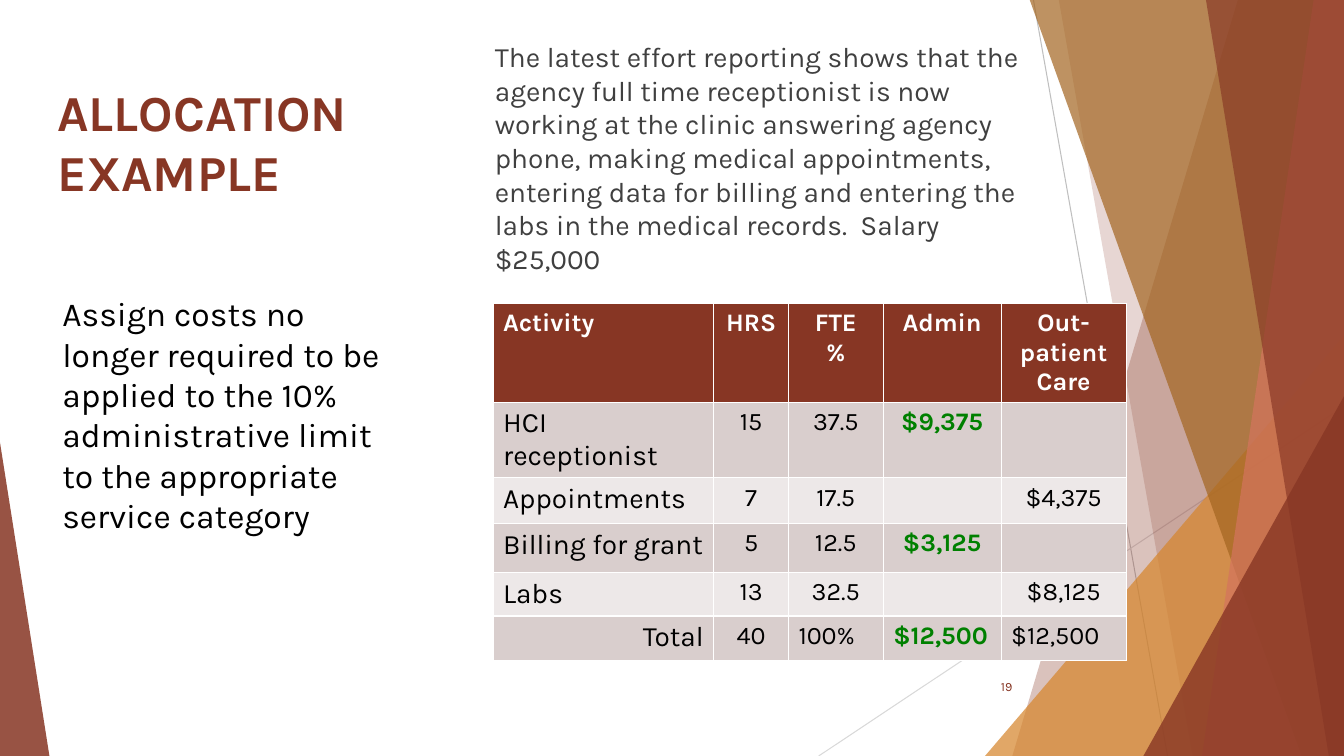
from lxml.etree import SubElement
from pptx import Presentation
from pptx.dml.color import RGBColor
from pptx.enum.shapes import MSO_CONNECTOR, MSO_SHAPE
from pptx.enum.text import MSO_ANCHOR, MSO_AUTO_SIZE, PP_ALIGN
from pptx.oxml.ns import qn
from pptx.util import Inches, Pt

COLORS = {
    "rust": "873624", "ochre": "A36520", "orange": "D6862D", "coral": "D4745E",
    "gray": "BFBFBF", "pale_gray": "D9D9D9", "body": "404040", "black": "000000",
    "white": "FFFFFF", "green": "008000", "band_dark": "D9CECD", "band_light": "EDE8E8",
}
LEFT, CENTER, RIGHT = PP_ALIGN.LEFT, PP_ALIGN.CENTER, PP_ALIGN.RIGHT
WIDTH, HEIGHT = 13.33, 7.5

RAYS = [
    ((10.25, 0), (11.58, HEIGHT), "gray"),
    ((WIDTH, 4.03), (8.12, HEIGHT), "pale_gray"),
]
BACK_BANDS = [(12.28, 10.04, "rust", 30), (10.5, 11.83, "rust", 20)]
FRONT_BANDS = [
    (10.21, 12.91, "ochre", 70),
    (13.03, 11.92, "coral", 70),
    (11.96, 13.18, "rust", 65),
]
COLUMN_WIDTHS = [2.19, 0.74, 0.94, 1.17, 1.24]
ROW_HEIGHTS = [0.97, 0.74, 0.45, 0.49, 0.43, 0.44]
ALLOCATION = [
    ["Activity", "HRS", "FTE\n%", "Admin", "Out-patient Care"],
    ["HCI receptionist", "15", "37.5", "$9,375", ""],
    ["Appointments", "7", "17.5", "", "$4,375"],
    ["Billing for grant", "5", "12.5", "$3,125", ""],
    ["Labs", "13", "32.5", "", "$8,125"],
    ["Total", "40", "100%", "$12,500", "$12,500"],
]
TOTAL_ALIGNMENTS = [RIGHT, CENTER, LEFT, LEFT, LEFT]


def rgb(name):
    return RGBColor.from_string(COLORS[name])


def format_text(frame, text, size, color, bold=False, alignment=LEFT, space_before=0):
    frame.text = text
    font_values = {"name": "Karla", "size": Pt(size), "bold": bold}
    for paragraph in frame.paragraphs:
        paragraph.alignment = alignment
        paragraph.space_before = Pt(space_before)
        for run in paragraph.runs:
            for name, value in font_values.items():
                setattr(run.font, name, value)
            run.font.color.rgb = rgb(color)


def place_text(shape, box, text, size, color, anchor=MSO_ANCHOR.TOP, **text_format):
    for name, value in zip(("left", "top", "width", "height"), box):
        setattr(shape, name, Inches(value))
    frame_values = {"word_wrap": True, "auto_size": MSO_AUTO_SIZE.NONE, "vertical_anchor": anchor}
    for name, value in frame_values.items():
        setattr(shape.text_frame, name, value)
    format_text(shape.text_frame, text, size, color, **text_format)


def add_text(slide, box, *content, **text_format):
    shape = slide.shapes.add_textbox(*map(Inches, box))
    place_text(shape, box, *content, **text_format)


def add_ray(slide, start, end, color):
    points = map(Inches, (*start, *end))
    connector = slide.shapes.add_connector(MSO_CONNECTOR.STRAIGHT, *points)
    connector.line.color.rgb = rgb(color)
    connector.line.width = Pt(0.75)
    SubElement(connector._element.spPr, qn("a:effectLst"))


def paint(shape, color, opacity):
    shape.shadow.inherit = False
    shape.line.fill.background()
    shape.fill.solid()
    shape.fill.fore_color.rgb = rgb(color)
    color_element = shape._element.spPr.find(qn("a:solidFill"))[0]
    SubElement(color_element, qn("a:alpha"), val=str(opacity * 1000))


def add_band(slide, top_x, bottom_x, color, opacity):
    """Draw a band that reaches from a slanted left edge to the slide's right side."""
    corners = [(WIDTH, -0.01), (WIDTH, HEIGHT), (bottom_x, HEIGHT)]
    builder = slide.shapes.build_freeform(Inches(top_x), Inches(-0.01))
    builder.add_line_segments([(Inches(x), Inches(y)) for x, y in corners], close=True)
    paint(builder.convert_to_shape(), color, opacity)


def add_triangle(slide, box, apex, color, opacity):
    shape = slide.shapes.add_shape(MSO_SHAPE.ISOSCELES_TRIANGLE, *map(Inches, box))
    shape.adjustments[0] = apex
    paint(shape, color, opacity)


def add_backdrop(slide):
    for ray in RAYS:
        add_ray(slide, *ray)
    for band in BACK_BANDS:
        add_band(slide, *band)
    add_triangle(slide, (9.77, 3.33, 3.56, 4.17), 1, "orange", 72)
    for band in FRONT_BANDS:
        add_band(slide, *band)
    add_triangle(slide, (11.34, 3.93, 1.99, 3.57), 1, "rust", 80)
    add_triangle(slide, (0, 4.39, 0.49, 3.11), 0, "rust", 85)


def cell_format(row, column):
    alignment = CENTER if column else LEFT
    if row == 0:
        return "rust", {"size": 18, "color": "white", "bold": True, "alignment": alignment}
    if row == len(ALLOCATION) - 1:
        alignment = TOTAL_ALIGNMENTS[column]
    is_admin = column == 3
    return "band_dark" if row % 2 else "band_light", {
        "size": 18 if column else 20,
        "color": "green" if is_admin else "black",
        "bold": is_admin,
        "alignment": alignment,
    }


def add_allocation_table(slide):
    box = (4.89, 3.01, sum(COLUMN_WIDTHS), sum(ROW_HEIGHTS))
    frame = slide.shapes.add_table(len(ROW_HEIGHTS), len(COLUMN_WIDTHS), *map(Inches, box))
    table = frame.table
    for column, width in zip(table.columns, COLUMN_WIDTHS):
        column.width = Inches(width)
    for row, height in zip(table.rows, ROW_HEIGHTS):
        row.height = Inches(height)
    for row_index, texts in enumerate(ALLOCATION):
        for column_index, text in enumerate(texts):
            cell = table.cell(row_index, column_index)
            fill, text_format = cell_format(row_index, column_index)
            cell.fill.solid()
            cell.fill.fore_color.rgb = rgb(fill)
            format_text(cell.text_frame, text, **text_format)


def main():
    presentation = Presentation()
    presentation.slide_width = Inches(WIDTH)
    presentation.slide_height = Inches(HEIGHT)
    slide = presentation.slides.add_slide(presentation.slide_layouts[5])
    add_backdrop(slide)
    place_text(slide.shapes.title, (0.47, 0.65, 4.22, 1.4), "ALLOCATION \vEXAMPLE",
               36, "rust", anchor=MSO_ANCHOR.BOTTOM, bold=True)
    add_text(slide, (4.81, 0.29, 5.63, 2.54),
             "The latest effort reporting shows that the agency full time receptionist is now "
             "working at the clinic answering agency phone, making medical appointments, "
             "entering data for billing and entering the labs in the medical records.  "
             "Salary $25,000",
             20, "body", anchor=MSO_ANCHOR.MIDDLE, space_before=10)
    add_text(slide, (0.52, 2.86, 3.56, 3.23),
             "Assign costs no longer required to be applied to the 10% administrative limit "
             "to the appropriate service category",
             24, "black", space_before=10)
    add_allocation_table(slide)
    add_text(slide, (9.39, 6.61, 0.75, 0.4), "19", 9, "rust",
             anchor=MSO_ANCHOR.MIDDLE, alignment=RIGHT)
    presentation.save("out.pptx")


if __name__ == "__main__":
    main()
